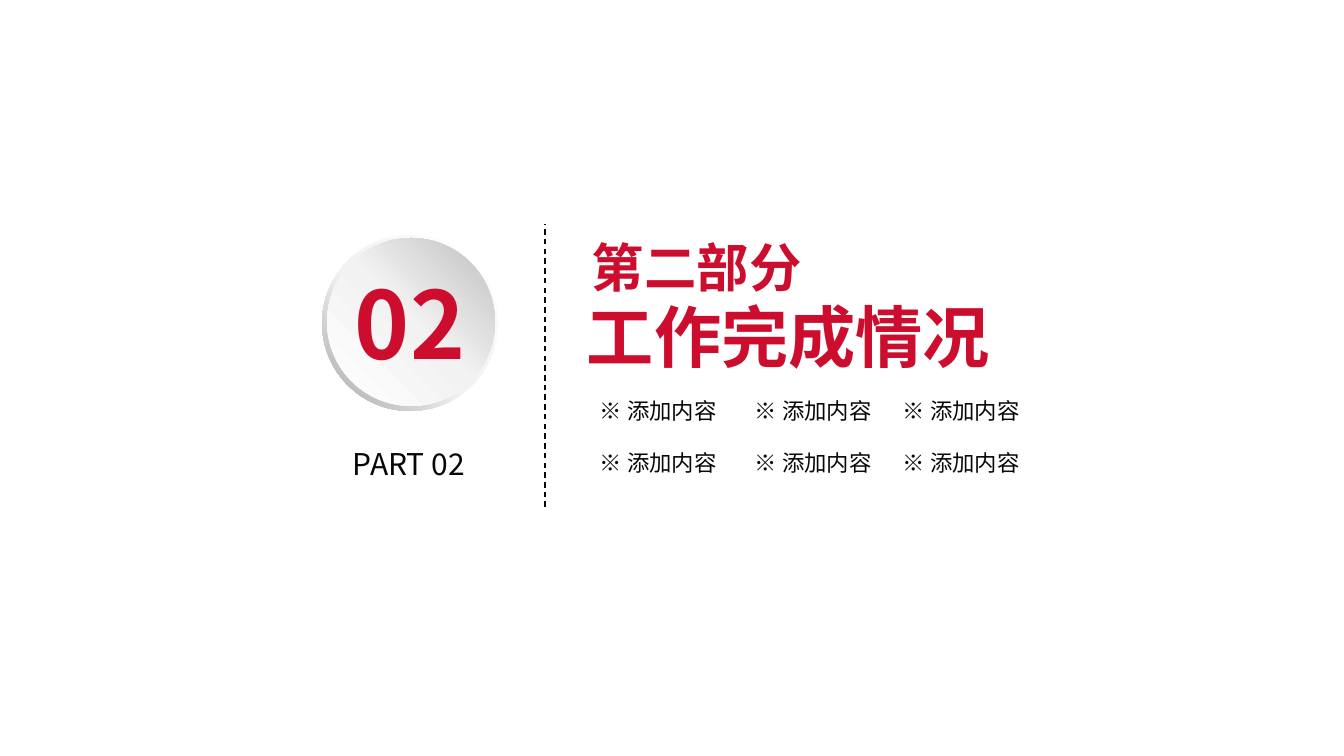
from itertools import product

from lxml import etree
from pptx import Presentation
from pptx.dml.color import RGBColor
from pptx.enum.dml import MSO_LINE_DASH_STYLE as Dash
from pptx.enum.shapes import MSO_CONNECTOR as Connector, MSO_SHAPE as Shape
from pptx.enum.text import MSO_ANCHOR as Anchor, MSO_AUTO_SIZE as AutoSize, PP_ALIGN as Align
from pptx.oxml.ns import qn
from pptx.util import Pt

RED = RGBColor(0xCC, 0x0D, 0x2E)
BLACK = RGBColor(0x08, 0x08, 0x08)
WHITE = RGBColor(0xFF, 0xFF, 0xFF)
PALE = RGBColor(0xF2, 0xF2, 0xF2)
SILVER = RGBColor(0xBF, 0xBF, 0xBF)
GREY = RGBColor(0xA6, 0xA6, 0xA6)
FONT = "Noto Sans CJK SC"


def px(n):
    return round(n * 914400 / 100.8)


def write(p, text, size, color=BLACK, bold=False, spacing=1.0, indent=0):
    p.alignment = Align.LEFT
    p.line_spacing = spacing
    p.space_before = Pt(0)
    pPr = p._p.get_or_add_pPr()
    pPr.set("marL", str(px(indent)))
    pPr.set("indent", "0")
    r = p.add_run()
    r.text = text
    r.font.size = Pt(size)
    r.font.bold = bold
    r.font.color.rgb = color
    r.font.name = FONT
    etree.SubElement(r._r.get_or_add_rPr(), qn("a:ea")).set("typeface", FONT)


class SectionSlide:
    def __init__(self, prs):
        self.slide = prs.slides.add_slide(prs.slide_layouts[5])
        self.shapes = self.slide.shapes

    def frame(self, sp, margins):
        tf = sp.text_frame
        tf.word_wrap = True
        tf.vertical_anchor = Anchor.TOP
        tf.margin_left, tf.margin_top, tf.margin_right, tf.margin_bottom = map(px, margins)
        return tf

    def title(self, x, y, w, h, lines):
        sp = self.shapes.title
        sp.left, sp.top, sp.width, sp.height = map(px, (x, y, w, h))
        tf = self.frame(sp, (10, 3, 0, 0))
        tf.auto_size = AutoSize.NONE
        for i, (text, size, indent) in enumerate(lines):
            p = tf.add_paragraph() if i else tf.paragraphs[0]
            write(p, text, size, RED, True, 0.98, indent)

    def text(self, x, y, w, h, text, size, margins=(0, 0, 0, 0), **style):
        sp = self.shapes.add_textbox(*map(px, (x, y, w, h)))
        tf = self.frame(sp, margins)
        tf.auto_size = AutoSize.SHAPE_TO_FIT_TEXT
        write(tf.paragraphs[0], text, size, **style)

    def gradient_shape(self, group, kind, x, y, size, stops, angle):
        sp = group.shapes.add_shape(kind, *map(px, (x, y, size, size)))
        sp.shadow.inherit = False
        sp.line.fill.background()
        sp.fill.gradient()
        sp.fill.gradient_angle = angle
        gs_list = sp._element.spPr.find(".//" + qn("a:gsLst"))
        for gs in list(gs_list):
            gs_list.remove(gs)
        for position, color in stops:
            gs = etree.SubElement(gs_list, qn("a:gs"), pos=str(position * 1000))
            etree.SubElement(gs, qn("a:srgbClr"), val=str(color))
        return sp

    def badge(self):
        group = self.shapes.add_group_shape()
        ring = self.gradient_shape(group, Shape.DONUT, 322, 235, 176,
                                   ((0, WHITE), (55, PALE), (100, GREY)), 225)
        ring.adjustments[0] = 0.05
        self.gradient_shape(group, Shape.OVAL, 327, 238, 168,
                            ((0, WHITE), (51, PALE), (100, SILVER)), 45)

    def dashed_line(self, x1, y1, x2, y2):
        line = self.shapes.add_connector(Connector.STRAIGHT, *map(px, (x1, y1, x2, y2)))
        line.line.color.rgb = BLACK
        line.line.width = Pt(1)
        line.line.dash_style = Dash.DASH
        etree.SubElement(line._element.spPr, qn("a:effectLst"))


def main():
    prs = Presentation()
    prs.slide_width, prs.slide_height = px(1344), px(756)
    s = SectionSlide(prs)
    s.title(577, 235, 427, 155, (("第二部分", 37.4, 5), ("工作完成情况", 48, 0)))
    s.dashed_line(545, 507, 545, 224)
    s.text(353, 446, 133, 36, "PART 02", 21.4)
    s.badge()
    for y, x in product((393, 445), (591, 746, 894)):
        s.text(x, y, 146, 36, "※ 添加内容", 16, margins=(9, 4, 9, 4))
    s.text(355, 266, 133, 113, "02", 66.7, color=RED, bold=True)
    prs.save("out.pptx")


if __name__ == "__main__":
    main()
